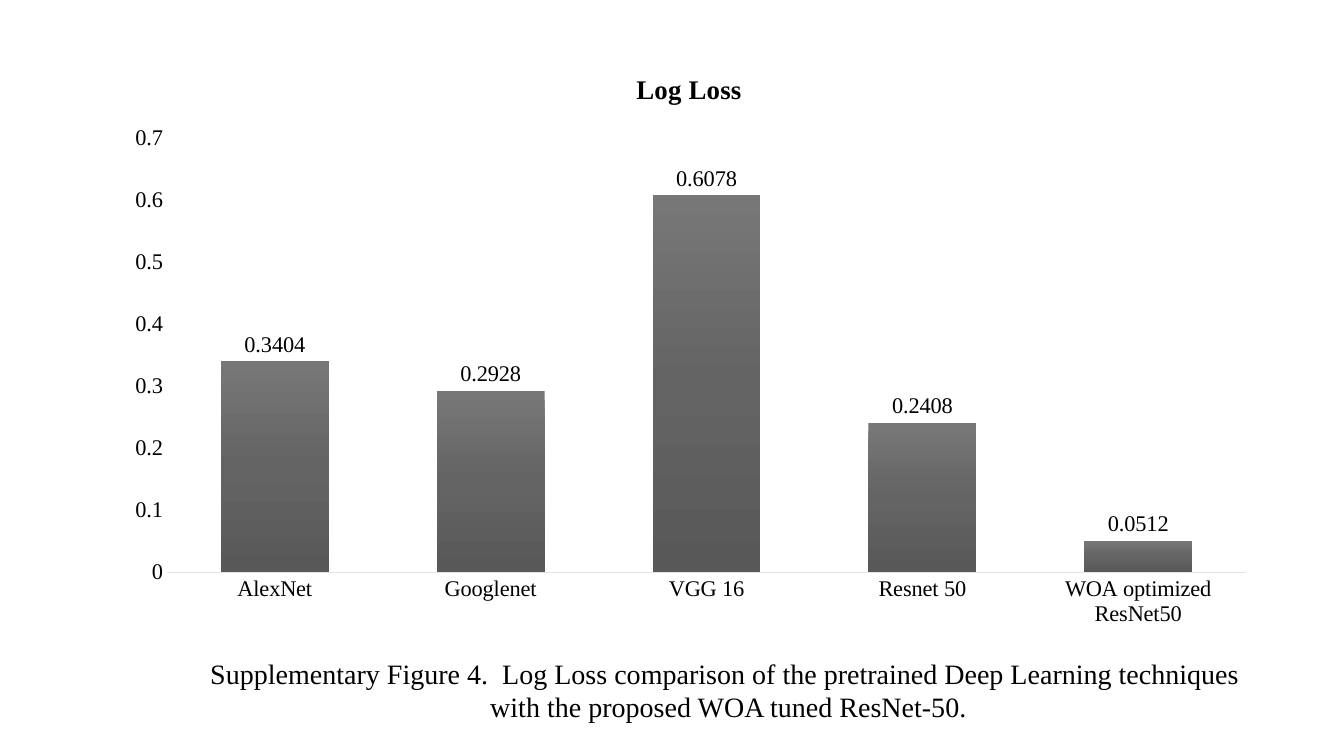
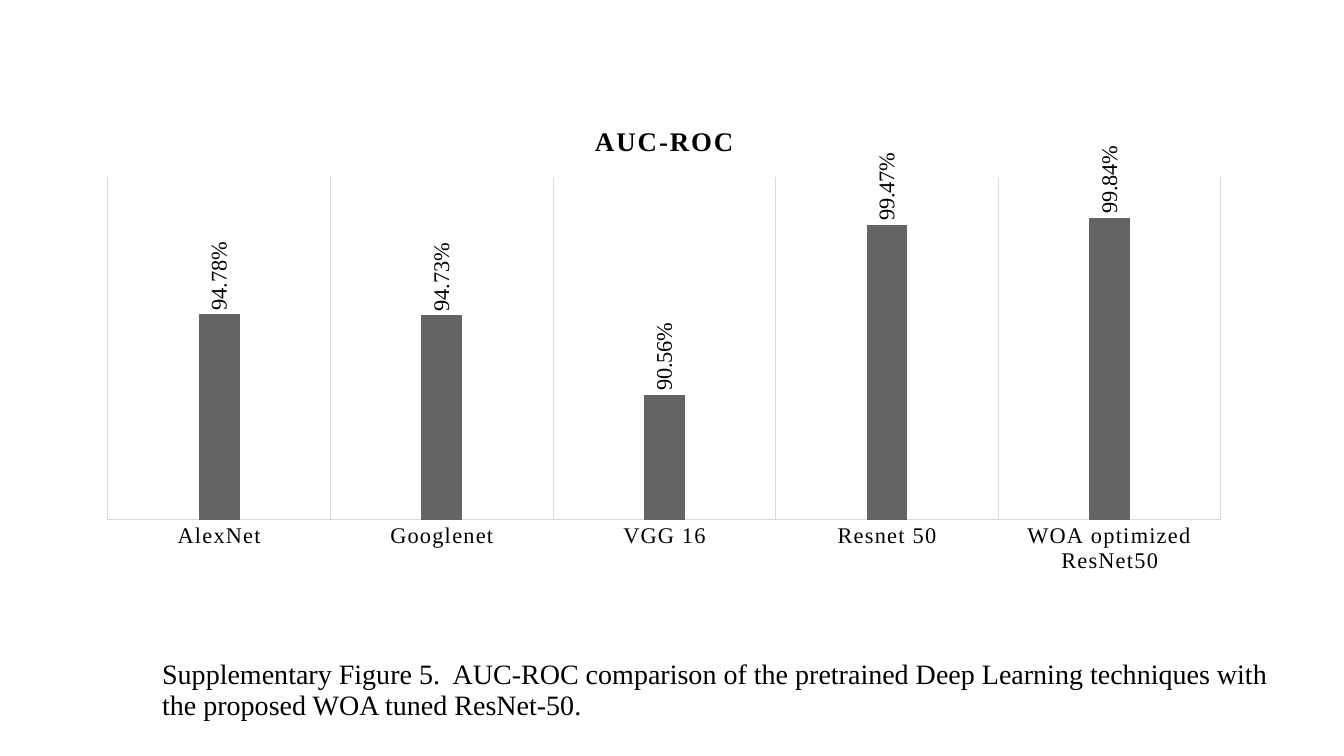
from copy import deepcopy

from lxml import etree
from pptx import Presentation
from pptx.chart.data import CategoryChartData
from pptx.dml.color import RGBColor
from pptx.enum.chart import XL_CHART_TYPE, XL_LABEL_POSITION, XL_TICK_MARK
from pptx.enum.text import MSO_ANCHOR, PP_ALIGN
from pptx.oxml.ns import qn
from pptx.util import Inches, Pt

FONT = "Times New Roman"
BLACK = RGBColor(0x00, 0x00, 0x00)
BAR = RGBColor(0x64, 0x64, 0x64)
BAR_TOP = RGBColor(0x77, 0x77, 0x77)
BAR_BOTTOM = RGBColor(0x58, 0x58, 0x58)
BLUE_GREY = RGBColor(0xE0, 0xE5, 0xEB)
GREY = RGBColor(0xD9, 0xD9, 0xD9)

MODELS = ["AlexNet", "Googlenet", "VGG 16", "Resnet 50", "WOA optimized ResNet50"]

# Boxes are left, top, width, height in inches; plot is in shares of the chart.
FIGURES = [
    dict(
        chart=dict(
            title="Log Loss", values=[0.3404, 0.2928, 0.6078, 0.2408, 0.0512],
            box=(1.08, 0.5, 11.51, 5.82), plot=(0.05, 0.15, 0.93, 0.74),
            scale=(0, 0.7, 0.1), gap=100, overlap=-24, line=BLUE_GREY,
            gradient=(BAR_TOP, BAR, BAR_BOTTOM)),
        caption=dict(
            lines=["Supplementary Figure 4.  Log Loss comparison of the pretrained "
                   "Deep Learning techniques ",
                   "with the proposed WOA tuned ResNet-50."],
            box=(1.95, 6.46, 10.55, 0.77), align=PP_ALIGN.CENTER, wrap=False)),
    dict(
        chart=dict(
            title="AUC-ROC", values=[0.9478, 0.9473, 0.9056, 0.9947, 0.9984],
            box=(0.84, 1.04, 11.5, 4.76), plot=(0.02, 0.15, 0.96, 0.715),
            scale=(0.84, 1.02, 0.02), gap=444, overlap=-90, line=GREY,
            number_format="0.00%", show_values_axis=False, gridlines=True,
            label_rotation=-90, title_spacing=1.2, tick_spacing=1),
        caption=dict(
            lines=["Supplementary Figure 5.  AUC-ROC comparison of the pretrained "
                   "Deep Learning techniques with the proposed WOA tuned ResNet-50."],
            box=(1.51, 6.13, 11.5, 1.45), line_spacing=0.9)),
]


def style_font(font, size=16, bold=False, spacing=0):
    font.name, font.size, font.bold = FONT, Pt(size), bold
    font.color.rgb = BLACK
    if spacing:
        font._element.set("spc", str(round(spacing * 100)))


def add_text(slide, lines, box, size=20, align=PP_ALIGN.LEFT, wrap=True, line_spacing=1):
    tf = slide.shapes.add_textbox(*map(Inches, box)).text_frame
    tf.word_wrap = wrap
    tf.vertical_anchor = MSO_ANCHOR.MIDDLE
    for i, line in enumerate(lines):
        p = tf.add_paragraph() if i else tf.paragraphs[0]
        p.alignment, p.line_spacing = align, line_spacing
        r = p.add_run()
        r.text = line
        style_font(r.font, size)


def place_plot(chart, shares):
    """Fix the inner plot area to the given shares of the chart."""
    area = chart._chartSpace.find(".//" + qn("c:plotArea"))
    for old in area.findall(qn("c:layout")):
        area.remove(old)
    layout = etree.Element(qn("c:layout"))
    manual = etree.SubElement(layout, qn("c:manualLayout"))
    settings = [("layoutTarget", "inner"), ("xMode", "edge"), ("yMode", "edge")]
    for tag, value in settings + list(zip("xywh", shares)):
        etree.SubElement(manual, qn("c:" + tag)).set("val", str(value))
    area.insert(0, layout)


def fill_gradient(fill, series, top, middle, bottom):
    fill.gradient()
    fill.gradient_angle = 270
    stop_list = series._element.find(".//" + qn("a:gsLst"))
    stop_list.insert(1, deepcopy(stop_list[0]))
    for stop, color, position in zip(fill.gradient_stops, (top, middle, bottom), (0, 0.5, 1)):
        stop.color.rgb = color
        stop.position = position


def add_bar_chart(slide, title, values, box, plot, scale, gap, overlap, line,
                  gradient=None, number_format="General", show_values_axis=True,
                  gridlines=False, label_rotation=0, title_spacing=0, tick_spacing=0):
    data = CategoryChartData(number_format=number_format)
    data.categories = MODELS
    data.add_series(title, values)
    chart = slide.shapes.add_chart(
        XL_CHART_TYPE.COLUMN_CLUSTERED, *map(Inches, box), data).chart
    style_font(chart.font)
    chart.has_legend = False
    chart.has_title = True
    r = chart.chart_title.text_frame.paragraphs[0].add_run()
    r.text = title
    style_font(r.font, 19.2, bold=True, spacing=title_spacing)
    place_plot(chart, plot)

    models, amounts = chart.category_axis, chart.value_axis
    for axis in (models, amounts):
        axis.major_tick_mark = axis.minor_tick_mark = XL_TICK_MARK.NONE
        axis.has_major_gridlines = False
    style_font(models.tick_labels.font, spacing=tick_spacing)
    lines = [models.format.line]
    if gridlines:
        models.has_major_gridlines = True
        lines.append(models.major_gridlines.format.line)
    for ln in lines:
        ln.color.rgb, ln.width = line, Pt(0.75)

    amounts.minimum_scale, amounts.maximum_scale, amounts.major_unit = scale
    amounts.visible = show_values_axis
    amounts.format.line.fill.background()
    style_font(amounts.tick_labels.font)

    bars = chart.plots[0]
    bars.gap_width, bars.overlap, bars.vary_by_categories = gap, overlap, False
    series = bars.series[0]
    series.invert_if_negative = False
    fill = series.format.fill
    if gradient:
        fill_gradient(fill, series, *gradient)
    else:
        fill.solid()
        fill.fore_color.rgb = BAR

    labels = series.data_labels
    labels.show_value = True
    labels.position = XL_LABEL_POSITION.OUTSIDE_END
    labels.number_format, labels.number_format_is_linked = number_format, False
    style_font(labels.font)
    if label_rotation:
        body = labels._element.find(".//" + qn("a:bodyPr"))
        body.set("rot", str(label_rotation * 60000))
        body.set("vert", "horz")


def main():
    prs = Presentation()
    prs.slide_width, prs.slide_height = Inches(13.33), Inches(7.5)
    for figure in FIGURES:
        s = prs.slides.add_slide(prs.slide_layouts[6])
        add_bar_chart(s, **figure["chart"])
        add_text(s, **figure["caption"])
    prs.save("out.pptx")


if __name__ == "__main__":
    main()
